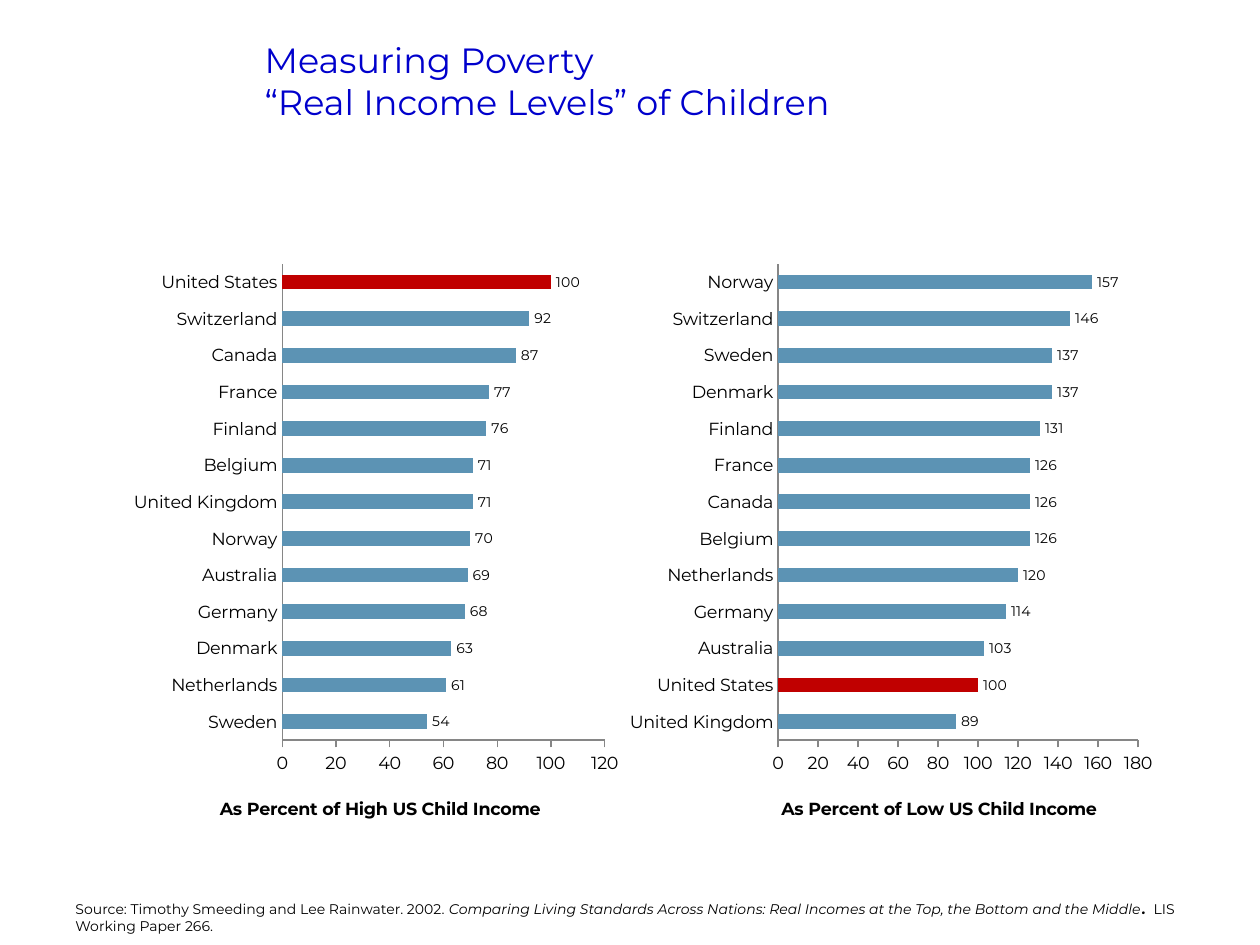
from dataclasses import dataclass

from pptx import Presentation
from pptx.chart.data import CategoryChartData
from pptx.dml.color import RGBColor
from pptx.enum.chart import XL_CHART_TYPE as ChartType
from pptx.enum.chart import XL_LABEL_POSITION as LabelPos
from pptx.enum.chart import XL_TICK_MARK as Tick
from pptx.enum.text import MSO_ANCHOR as Anchor
from pptx.enum.text import MSO_AUTO_SIZE as AutoSize
from pptx.enum.text import PP_ALIGN as Align
from pptx.oxml.xmlchemy import OxmlElement
from pptx.util import Pt

FONT = "Montserrat"
BLACK, BLUE, BAR, HIGHLIGHT, AXIS = "000000", "0000CC", "5C93B4", "C00000", "868686"
CHART_TOP, CHART_HEIGHT = 144, 336
HOME = "United States"


@dataclass
class IncomeChart:
    left: float
    width: float
    axis_title: str
    axis_max: int
    values: dict[str, int]  # from the bottom bar to the top bar
    plot_layout: dict[str, float]  # fractions of the chart
    title_layout: dict[str, float]


LOW = IncomeChart(
    354.24, 311.76, "As Percent of Low US Child Income", 180,
    {"United Kingdom": 89, HOME: 100, "Australia": 103, "Germany": 114,
     "Netherlands": 120, "Belgium": 126, "Canada": 126, "France": 126,
     "Finland": 131, "Denmark": 137, "Sweden": 137, "Switzerland": 146,
     "Norway": 157},
    {"x": 0.29, "y": 0.02, "w": 0.66, "h": 0.81},
    {"x": 0.29, "y": 0.92},
)
HIGH = IncomeChart(
    72, 288, "As Percent of High US Child Income", 120,
    {"Sweden": 54, "Netherlands": 61, "Denmark": 63, "Germany": 68,
     "Australia": 69, "Norway": 70, "United Kingdom": 71, "Belgium": 71,
     "Finland": 76, "France": 77, "Canada": 87, "Switzerland": 92, HOME: 100},
    {"x": 0.31, "y": 0.02, "w": 0.64, "h": 0.81},
    {"x": 0.18, "y": 0.92},
)


def rgb(color: str) -> RGBColor:
    return RGBColor.from_string(color)


def style_font(font, size: float, color: str = BLACK) -> None:
    font.name, font.size = FONT, Pt(size)
    font.color.rgb = rgb(color)


def set_layout(parent, index: int, fractions: dict[str, float]) -> None:
    """Give a plot area or axis title a fixed place inside its chart."""
    for old in parent.xpath("./c:layout"):
        parent.remove(old)
    layout, manual = OxmlElement("c:layout"), OxmlElement("c:manualLayout")
    layout.append(manual)
    settings = {"layoutTarget": "inner"} if "w" in fractions else {}
    settings |= {"xMode": "edge", "yMode": "edge"} | fractions
    for name, value in settings.items():
        child = OxmlElement(f"c:{name}")
        child.set("val", str(value))
        manual.append(child)
    parent.insert(index, layout)


def add_income_chart(slide, item: IncomeChart) -> None:
    data = CategoryChartData()
    data.categories = list(item.values)
    data.add_series("Series 1", list(item.values.values()))
    chart = slide.shapes.add_chart(
        ChartType.BAR_CLUSTERED, Pt(item.left), Pt(CHART_TOP),
        Pt(item.width), Pt(CHART_HEIGHT), data).chart
    chart.has_legend = chart.has_title = False
    style_font(chart.font, 10)

    # Bars and value labels
    plot = chart.plots[0]
    plot.gap_width, plot.vary_by_categories = 150, False
    series = plot.series[0]
    home = series.points[list(item.values).index(HOME)]
    for part, color in ((series, BAR), (home, HIGHLIGHT)):
        part.format.fill.solid()
        part.format.fill.fore_color.rgb = rgb(color)
    plot.has_data_labels = True
    labels = plot.data_labels
    labels.show_value, labels.position = True, LabelPos.OUTSIDE_END
    style_font(labels.font, 8)

    # Axes
    cat, val = chart.category_axis, chart.value_axis
    for axis, tick in ((cat, Tick.NONE), (val, Tick.OUTSIDE)):
        axis.has_major_gridlines = False
        axis.major_tick_mark, axis.minor_tick_mark = tick, Tick.NONE
        axis.format.line.color.rgb = rgb(AXIS)
        axis.format.line.width = Pt(0.75)
        style_font(axis.tick_labels.font, 10)
    val.minimum_scale, val.maximum_scale, val.major_unit = 0, item.axis_max, 20
    tf = val.axis_title.text_frame
    tf.text = item.axis_title
    font = tf.paragraphs[0].runs[0].font
    style_font(font, 10)
    font.bold = True

    plot_area = chart.element.xpath("./c:chart/c:plotArea")[0]
    set_layout(plot_area, 0, item.plot_layout)
    set_layout(plot_area.xpath("./c:valAx/c:title")[0], 1, item.title_layout)


def add_title(slide) -> None:
    sp = slide.shapes.title
    sp.left, sp.top, sp.width, sp.height = Pt(144), Pt(4.32), Pt(570.24), Pt(108)
    tf = sp.text_frame
    tf.auto_size, tf.vertical_anchor = AutoSize.NONE, Anchor.MIDDLE
    tf.margin_bottom = Pt(28)
    tf.text = "Measuring Poverty\v“Real Income Levels” of Children"
    p = tf.paragraphs[0]
    p.alignment = Align.LEFT
    for r in p.runs:
        style_font(r.font, 20, BLUE)


def add_source(slide) -> None:
    tf = slide.shapes.add_textbox(Pt(36), Pt(511.2), Pt(678.24), Pt(17.28)).text_frame
    tf.word_wrap = True
    p = tf.paragraphs[0]
    for text, bold, italic in (
        ("Source: Timothy Smeeding and Lee Rainwater. 2002. ", False, False),
        ("Comparing Living Standards Across Nations: Real Incomes at the Top, "
         "the Bottom and the Middle", False, True),
        (".  ", True, True),
        ("LIS Working Paper 266.", False, False),
    ):
        r = p.add_run()
        r.text = text
        style_font(r.font, 8)
        r.font.bold, r.font.italic = bold, italic


def main() -> None:
    prs = Presentation()
    prs.slide_width, prs.slide_height = Pt(720), Pt(540)
    slide = prs.slides.add_slide(prs.slide_layouts[5])
    add_title(slide)
    add_source(slide)
    for item in (LOW, HIGH):
        add_income_chart(slide, item)
    prs.save("out.pptx")


if __name__ == "__main__":
    main()
